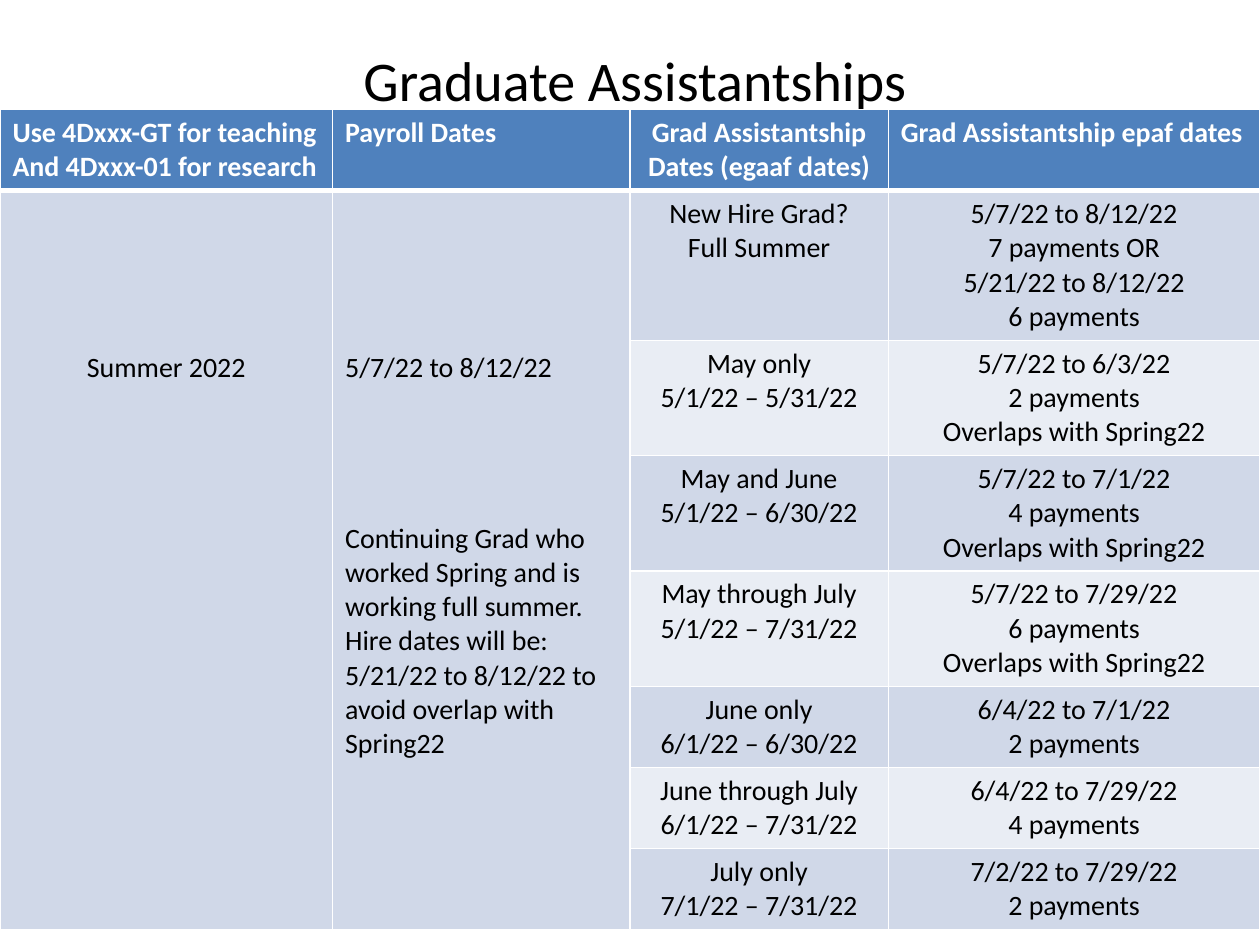
from dataclasses import dataclass

from lxml.etree import SubElement
from pptx import Presentation
from pptx.dml.color import RGBColor
from pptx.enum.text import MSO_ANCHOR as Anchor, PP_ALIGN as Align
from pptx.oxml.ns import qn
from pptx.slide import Slide
from pptx.util import Inches, Pt

BLACK = RGBColor(0x00, 0x00, 0x00)
WHITE = RGBColor(0xFF, 0xFF, 0xFF)
HEADER_BLUE = RGBColor(0x4F, 0x81, 0xBD)
BAND_DARK = RGBColor(0xD0, 0xD8, 0xE8)
BAND_LIGHT = RGBColor(0xE9, 0xED, 0xF4)

SLIDE_WIDTH, SLIDE_HEIGHT = Inches(10), Inches(7.5)
COLUMN_SHARES = (0.264, 0.236, 0.205, 0.295)

HEADINGS = (
    ("Use 4Dxxx-GT for teaching\nAnd 4Dxxx-01 for research", Align.LEFT),
    ("Payroll Dates", Align.LEFT),
    ("Grad Assistantship Dates (egaaf dates)", Align.CENTER),
    ("Grad Assistantship epaf dates", Align.LEFT),
)
TERM = "Summer 2022"
PAYROLL = (
    "5/7/22 to 8/12/22\n"
    "Continuing Grad who worked Spring and is working full summer. Hire dates will be:\n"
    "5/21/22 to 8/12/22 to avoid overlap with Spring22"
)
OVERLAP = "Overlaps with Spring22"
ASSISTANTSHIPS = (
    ("New Hire Grad?\nFull Summer",
     "5/7/22 to 8/12/22\n7 payments OR\n5/21/22 to 8/12/22\n6 payments"),
    ("May only\n5/1/22 – 5/31/22", f"5/7/22 to 6/3/22\n2 payments\n{OVERLAP}"),
    ("May and June\n5/1/22 – 6/30/22", f"5/7/22 to 7/1/22\n4 payments\n{OVERLAP}"),
    ("May through July\n5/1/22 – 7/31/22", f"5/7/22 to 7/29/22\n6 payments\n{OVERLAP}"),
    ("June only\n6/1/22 – 6/30/22", "6/4/22 to 7/1/22\n2 payments"),
    ("June through July\n6/1/22 – 7/31/22", "6/4/22 to 7/29/22\n4 payments"),
    ("July only\n7/1/22 – 7/31/22", "7/2/22 to 7/29/22\n2 payments"),
)


def write_text(frame, text, size=16, color=BLACK, bold=False, align=Align.LEFT,
               font_name="Calibri"):
    frame.text = text
    for paragraph in frame.paragraphs:
        paragraph.alignment = align
        for run in paragraph.runs:
            font = run.font
            font.name, font.size, font.bold = font_name, Pt(size), bold
            font.color.rgb = color


@dataclass
class SlideBuilder:
    slide: Slide
    border_color: RGBColor = WHITE
    border_points: float = 1

    def place(self, left, top, width, height):
        return (round(SLIDE_WIDTH * left), round(SLIDE_HEIGHT * top),
                round(SLIDE_WIDTH * width), round(SLIDE_HEIGHT * height))

    def title(self, text, *shares):
        shape = self.slide.shapes.title
        shape.left, shape.top, shape.width, shape.height = self.place(*shares)
        frame = shape.text_frame
        frame.word_wrap = True
        frame.vertical_anchor = Anchor.MIDDLE
        write_text(frame, text, size=32, align=Align.CENTER)

    def table(self, row_heights, column_shares, *shares):
        frame = self.slide.shapes.add_table(
            len(row_heights), len(column_shares), *self.place(*shares))
        table = frame.table
        for row, height in zip(table.rows, row_heights):
            row.height = height
        for column, share in zip(table.columns, column_shares):
            column.width = round(SLIDE_WIDTH * share)
        return table

    def cell(self, cell, fill, bottom_points=None):
        properties = cell._tc.get_or_add_tcPr()
        for side in "LRTB":
            points = self.border_points
            if side == "B" and bottom_points:
                points = bottom_points
            line = SubElement(properties, qn(f"a:ln{side}"), w=str(Pt(points)))
            solid = SubElement(line, qn("a:solidFill"))
            SubElement(solid, qn("a:srgbClr"), val=str(self.border_color))
        cell.fill.solid()
        cell.fill.fore_color.rgb = fill


def row_height(*texts):
    lines = max(text.count("\n") + 1 for text in texts)
    return Inches(0.1 + 0.27 * lines)


def add_schedule(builder):
    heights = [row_height(HEADINGS[0][0])]
    heights += [row_height(*texts) for texts in ASSISTANTSHIPS]
    table = builder.table(heights, COLUMN_SHARES, 0, 0.116, 1, 0.864)

    for column, (text, align) in enumerate(HEADINGS):
        cell = table.cell(0, column)
        builder.cell(cell, HEADER_BLUE, bottom_points=3)
        write_text(cell.text_frame, text, color=WHITE, bold=True, align=align)

    for row, texts in enumerate(ASSISTANTSHIPS, start=1):
        band = BAND_DARK if row % 2 else BAND_LIGHT
        for column in range(len(COLUMN_SHARES)):
            builder.cell(table.cell(row, column), BAND_DARK if column < 2 else band)
        for column, text in enumerate(texts, start=2):
            write_text(table.cell(row, column).text_frame, text, align=Align.CENTER)

    for column, (text, align) in enumerate(((TERM, Align.CENTER), (PAYROLL, Align.LEFT))):
        cell = table.cell(1, column)
        cell.merge(table.cell(len(ASSISTANTSHIPS), column))
        cell.margin_top = Inches(1.27)
        write_text(cell.text_frame, text, align=align)
    table.cell(1, 1).text_frame.paragraphs[1].space_before = Pt(78)


def main():
    presentation = Presentation()
    presentation.slide_width, presentation.slide_height = SLIDE_WIDTH, SLIDE_HEIGHT
    title_only = presentation.slide_layouts.get_by_name("Title Only")
    builder = SlideBuilder(presentation.slides.add_slide(title_only))
    builder.title("Graduate Assistantships", 0.045, 0.041, 0.918, 0.085)
    add_schedule(builder)
    presentation.save("out.pptx")


if __name__ == "__main__":
    main()
